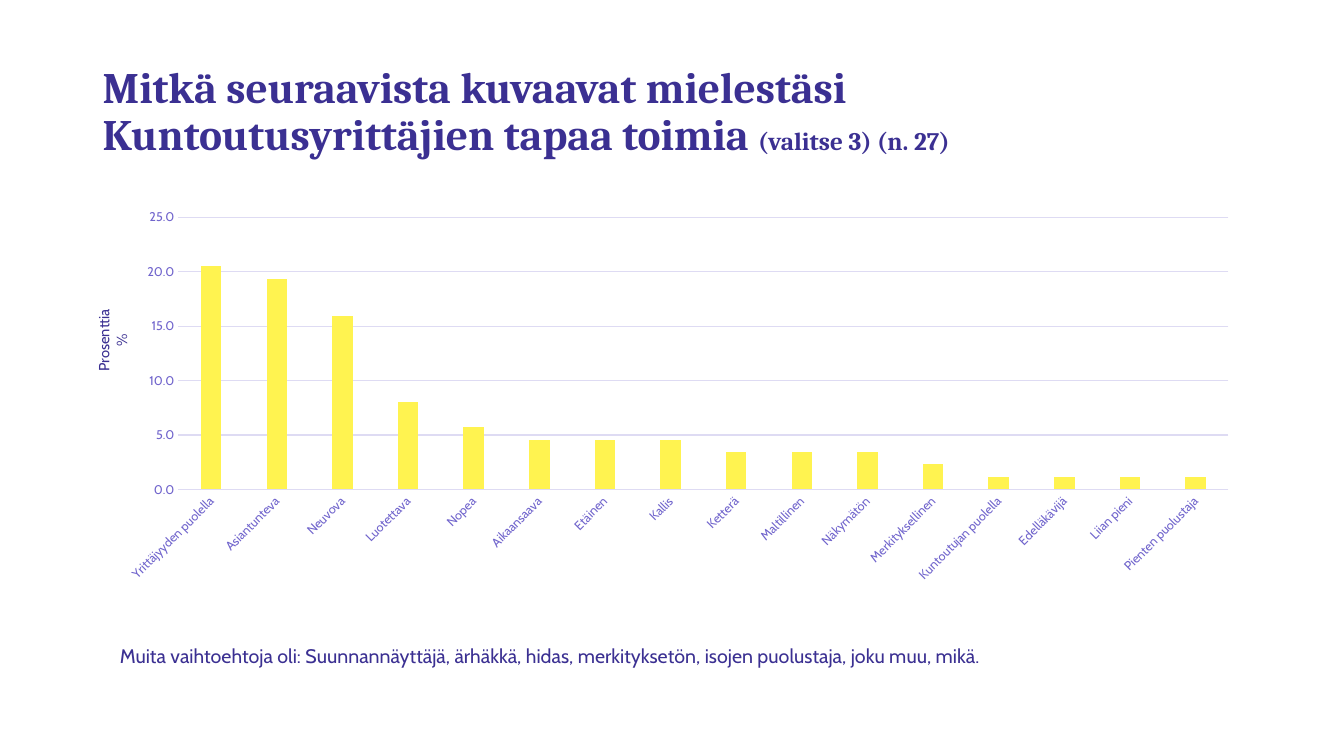
from pptx import Presentation
from pptx.chart.data import CategoryChartData as Data
from pptx.dml.color import RGBColor as Rgb
from pptx.enum.chart import XL_CHART_TYPE as Kind, XL_TICK_MARK as Tick
from pptx.enum.text import MSO_ANCHOR as Anchor, PP_ALIGN as Align
from pptx.oxml import parse_xml
from pptx.oxml.ns import nsdecls
from pptx.util import Inches, Pt

INK, SOFT, GRID, BAR = "3B3092", "7064CC", "DEDBF3", "FFF350"

deck = Presentation()
deck.slide_width, deck.slide_height = Inches(13.33), Inches(7.5)
W, H = deck.slide_width / 100, deck.slide_height / 100
slide = deck.slides.add_slide(deck.slide_layouts[6])


def style(font, size, color, name="Cabin", bold=False):
    look = {"size": Pt(size), "name": name, "bold": bold}
    for key, value in look.items():
        setattr(font, key, value)
    font.color.rgb = Rgb.from_string(color)


def write(x, y, w, h, runs, name="Cabin", bold=False, **form):
    box = slide.shapes.add_textbox(int(x * W), int(y * H), int(w * W), int(h * H))
    frame = box.text_frame
    frame.word_wrap = True
    frame.vertical_anchor = form.pop("anchor", Anchor.TOP)
    box.rotation = form.pop("turn", 0)
    para = frame.paragraphs[0]
    for key, value in form.items():
        setattr(para, key, value)
    for text, size in runs:
        run = para.add_run()
        run.text = text
        style(run.font, size, INK, name, bold)


write(6.9, 5.33, 86.27, 19.33,
      [("Mitkä seuraavista kuvaavat mielestäsi Kuntoutusyrittäjien tapaa toimia ", 31),
       ("(valitse 3) (n. 27)", 18)],
      "Cambria", True, anchor=Anchor.MIDDLE, line_spacing=0.9)
write(4.95, 42, 6.83, 6, [("Prosenttia %", 10.5)], turn=270, alignment=Align.CENTER)

shares = {
    "Yrittäjyyden puolella": 20.5, "Asiantunteva": 19.3, "Neuvova": 15.9,
    "Luotettava": 8, "Nopea": 5.7, "Aikaansaava": 4.5, "Etäinen": 4.5,
    "Kallis": 4.5, "Ketterä": 3.4, "Maltillinen": 3.4, "Näkymätön": 3.4,
    "Merkityksellinen": 2.3, "Kuntoutujan puolella": 1.1, "Edelläkävijä": 1.1,
    "Liian pieni": 1.1, "Pienten puolustaja": 1.1,
}
data = Data(number_format="0.0")
data.categories = list(shares)
data.add_series("Series 1", list(shares.values()))
chart = slide.shapes.add_chart(
    Kind.COLUMN_CLUSTERED, int(8.18 * W), int(26.67 * H),
    int(84.92 * W), int(51.47 * H), data).chart
chart.has_title = chart.has_legend = False
style(chart.font, 10, INK)

plot = chart.plots[0]
for key, value in {"gap_width": 219, "overlap": -27, "vary_by_categories": False}.items():
    setattr(plot, key, value)
fill = plot.series[0].format.fill
fill.solid()
fill.fore_color.rgb = Rgb.from_string(BAR)

cat, val = chart.category_axis, chart.value_axis
for axis in (cat, val):
    axis.major_tick_mark = axis.minor_tick_mark = Tick.NONE
    style(axis.tick_labels.font, 9, SOFT)
cat.tick_labels.font._element.getparent().getparent().getparent().bodyPr.set("rot", "-2700000")
for key, value in {"minimum_scale": 0, "maximum_scale": 25, "major_unit": 5}.items():
    setattr(val, key, value)
val.tick_labels.number_format = "0.0"
val.tick_labels.number_format_is_linked = False
val.format.line.fill.background()
for line in (cat.format.line, val.major_gridlines.format.line):
    line.width = Pt(0.75)
    line.color.rgb = Rgb.from_string(GRID)

area = plot._element.getparent()
for old in area.findall("{*}layout"):
    area.remove(old)
place = {"xMode": "edge", "yMode": "edge", "x": 0.06, "y": 0.04, "w": 0.92, "h": 0.7}
tags = "".join(f'<c:{key} val="{value}"/>' for key, value in place.items())
area.insert(0, parse_xml(
    f'<c:layout {nsdecls("c")}><c:manualLayout><c:layoutTarget val="inner"/>'
    f'{tags}</c:manualLayout></c:layout>'))

write(8.18, 84.53, 79.3, 4.53,
      [("Muita vaihtoehtoja oli: Suunnannäyttäjä, ärhäkkä, hidas, merkityksetön, "
        "isojen puolustaja, joku muu, mikä.", 14)])

deck.save("out.pptx")
